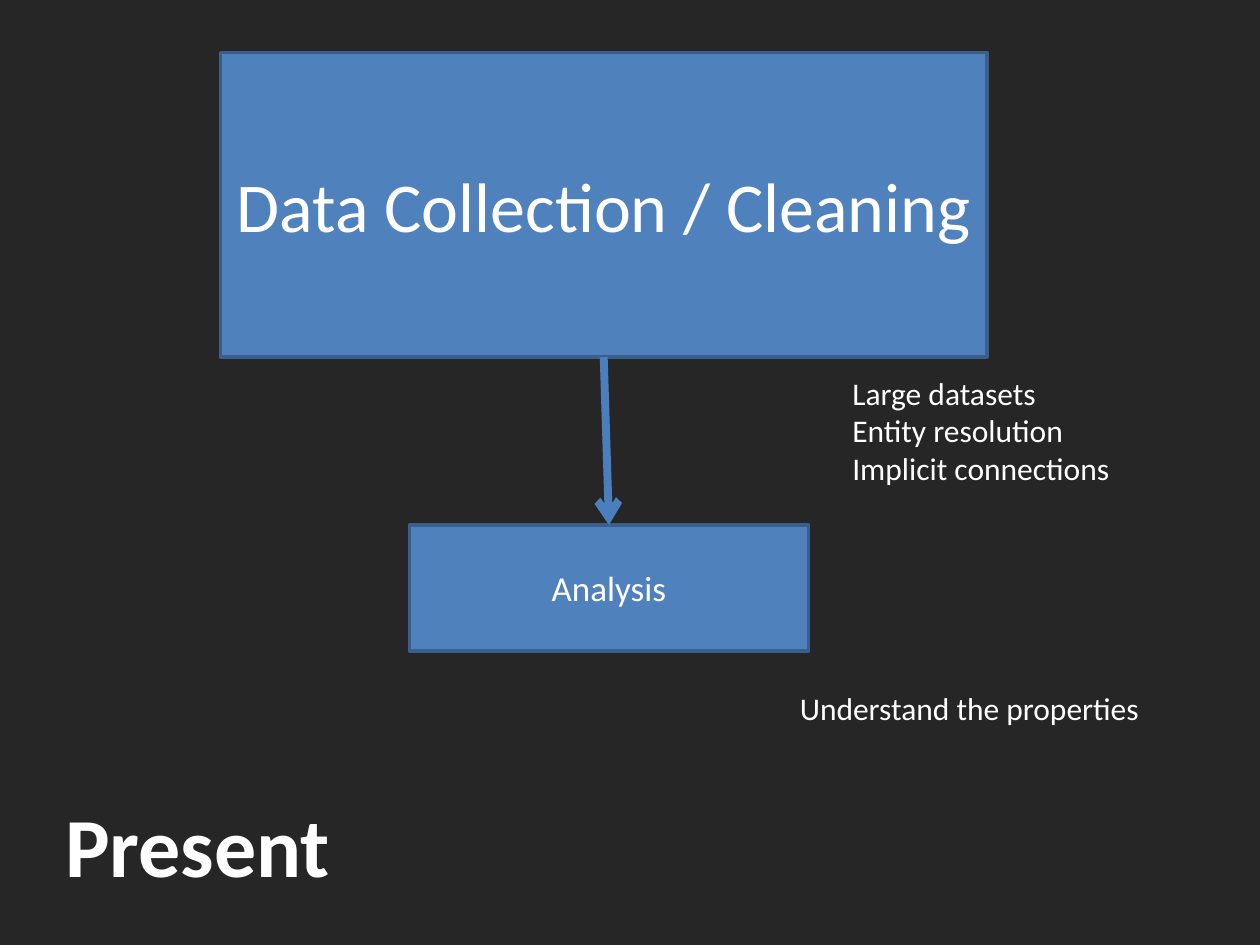
import pptx
import pptx.util
import pptx.dml.color
import pptx.enum.shapes
import pptx.enum.text
import pptx.oxml.ns
import lxml.etree

EMU_PER_PX = 9525
FONT = "Calibri"
WHITE = "FFFFFF"
BACKGROUND = "262626"
BOX_FILL = "4F81BD"
BOX_LINE = "3A5F8C"
ARROW_LINE = "4B7EBC"
BOTTOM, TOP = 2, 0


def px(length):
    return pptx.util.Emu(length * EMU_PER_PX)


def paint(color_format, value):
    color_format.rgb = pptx.dml.color.RGBColor.from_string(value)


def fill_solid(fill, value):
    fill.solid()
    paint(fill.fore_color, value)


def write(frame, lines, size, align, anchor, bold=False):
    frame.word_wrap = True
    frame.vertical_anchor = anchor
    for index, line in enumerate(lines):
        para = frame.add_paragraph() if index else frame.paragraphs[0]
        para.alignment = align
        span = para.add_run()
        span.text = line
        span.font.name = FONT
        span.font.size = pptx.util.Pt(size)
        span.font.bold = bold
        paint(span.font.color, WHITE)


def add_step(page, left, top, width, height, label, size):
    box = page.shapes.add_shape(
        pptx.enum.shapes.MSO_SHAPE.RECTANGLE, px(left), px(top), px(width), px(height))
    box.shadow.inherit = False
    fill_solid(box.fill, BOX_FILL)
    paint(box.line.color, BOX_LINE)
    box.line.width = pptx.util.Pt(2)
    write(box.text_frame, [label], size,
          pptx.enum.text.PP_ALIGN.CENTER, pptx.enum.text.MSO_ANCHOR.MIDDLE)
    return box


def add_arrow(page, source, target):
    arrow = page.shapes.add_connector(pptx.enum.shapes.MSO_CONNECTOR.STRAIGHT, 0, 0, 0, 0)
    arrow.begin_connect(source, BOTTOM)
    arrow.end_connect(target, TOP)
    paint(arrow.line.color, ARROW_LINE)
    arrow.line.width = pptx.util.Pt(4.5)
    line = arrow.line._get_or_add_ln()
    lxml.etree.SubElement(line, pptx.oxml.ns.qn("a:tailEnd"), type="arrow")
    lxml.etree.SubElement(arrow._element.spPr, pptx.oxml.ns.qn("a:effectLst"))


def add_note(page, left, top, width, height, lines):
    box = page.shapes.add_textbox(px(left), px(top), px(width), px(height))
    write(box.text_frame, lines, 18,
          pptx.enum.text.PP_ALIGN.LEFT, pptx.enum.text.MSO_ANCHOR.TOP)
    box.text_frame.auto_size = pptx.enum.text.MSO_AUTO_SIZE.SHAPE_TO_FIT_TEXT


def set_title(page, left, top, width, height, label):
    title = page.shapes.title
    title.left, title.top, title.width, title.height = map(px, (left, top, width, height))
    write(title.text_frame, [label], 48,
          pptx.enum.text.PP_ALIGN.LEFT, pptx.enum.text.MSO_ANCHOR.TOP, bold=True)
    title.text_frame.auto_size = pptx.enum.text.MSO_AUTO_SIZE.SHAPE_TO_FIT_TEXT


def main():
    deck = pptx.Presentation()
    deck.slide_width, deck.slide_height = px(960), px(720)
    page = deck.slides.add_slide(deck.slide_layouts.get_by_name("Title Only"))
    fill_solid(page.background.fill, BACKGROUND)

    collection = add_step(page, 168, 40, 584, 232, "Data Collection / Cleaning", 40)
    analysis = add_step(page, 312, 400, 304, 96, "Analysis", 20)
    add_arrow(page, collection, analysis)
    add_note(page, 640, 280, 296, 97,
             ["Large datasets", "Entity resolution", "Implicit connections"])
    add_note(page, 600, 520, 296, 39, ["Understand the properties"])
    set_title(page, 40, 600, 296, 87, "Present")

    deck.save("out.pptx")


if __name__ == "__main__":
    main()
